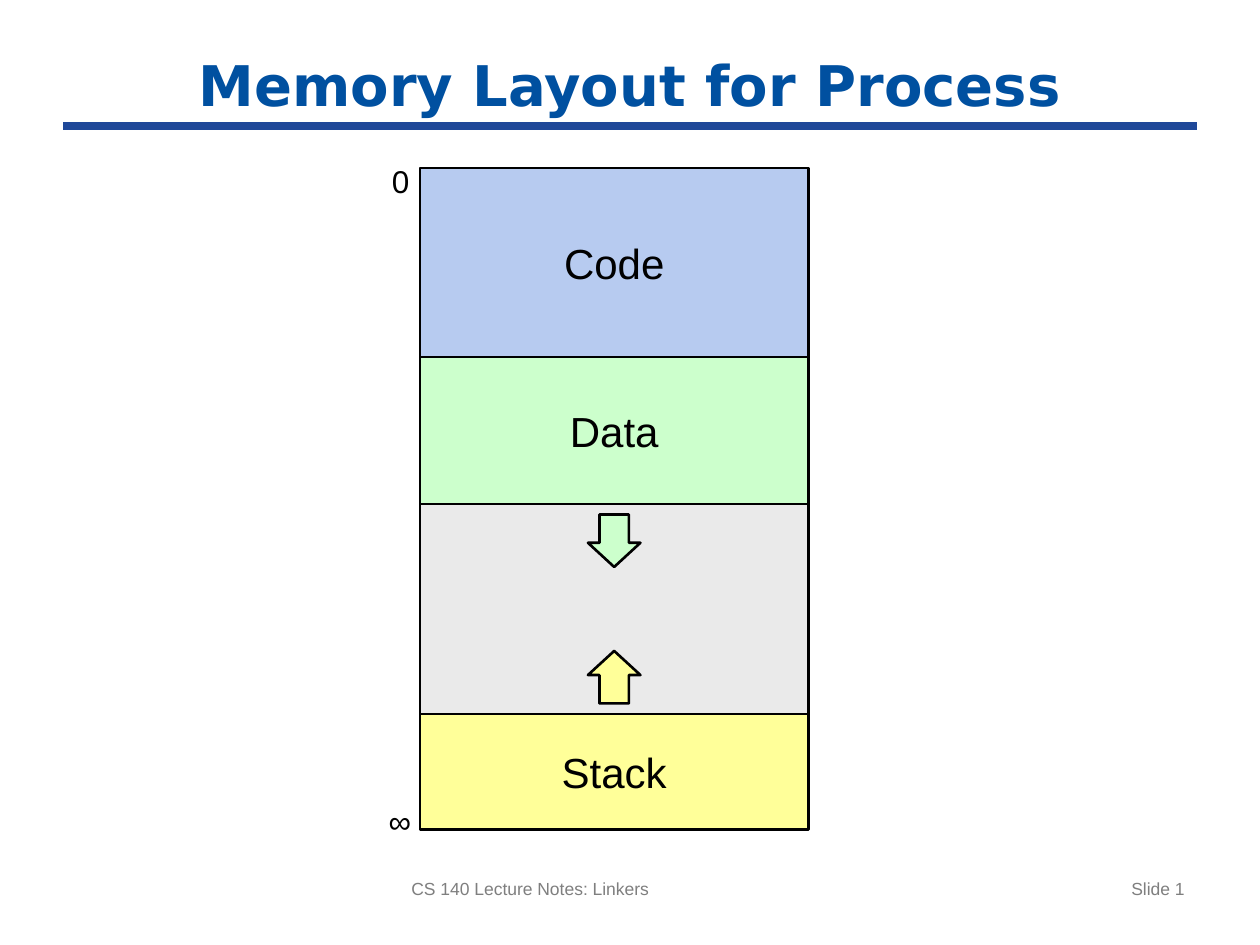
from pptx import Presentation
from pptx.dml.color import RGBColor
from pptx.enum.shapes import MSO_CONNECTOR, MSO_SHAPE as SHAPE
from pptx.enum.text import MSO_ANCHOR as ANCHOR, MSO_AUTO_SIZE as FIT, PP_ALIGN as ALIGN
from pptx.oxml.ns import qn
from pptx.util import Inches, Pt
from lxml.etree import SubElement

# Grid of twelve units to the inch
UNIT = Inches(1) // 12
BLACK, GREY, BLUE = "000000", "7F7F7F", "0050A0"
GREEN, YELLOW = "CCFFCC", "FFFF99"

# Memory column, in grid units
LEFT, TOP, WIDTH = 40, 16, 37
SEGMENTS = [  # name, height, fill
    ("Code", 18, "B7CBF0"),
    ("Data", 14, GREEN),
    ("", 20, "EAEAEA"),
    ("Stack", 11, YELLOW),
]
ARROW = 5


def grid(*units):
    return [round(u * UNIT) for u in units]


def rgb(hex_color):
    return RGBColor.from_string(hex_color)


def write(sp, text, size, color, align, font="Arial", bold=False):
    tf = sp.text_frame
    tf.text = text
    p = tf.paragraphs[0]
    p.alignment = align
    f = p.runs[0].font
    f.name, f.size, f.bold = font, Pt(size), bold
    f.color.rgb = rgb(color)
    return tf


def add_title(s, text):
    sp = s.shapes.title
    sp.left, sp.top, sp.width, sp.height = grid(6, 4, 108, 8)
    tf = write(sp, text, 32, BLUE, ALIGN.CENTER, "DejaVu Sans", True)
    tf.auto_size = FIT.NONE
    tf.vertical_anchor = ANCHOR.MIDDLE


def add_rule(s):
    line = s.shapes.add_connector(MSO_CONNECTOR.STRAIGHT, *grid(6, 12, 114, 12))
    line.line.color.rgb = rgb("1F4899")
    line.line.width = Pt(4.5)
    SubElement(line._element.spPr, qn("a:effectLst"))


def add_block(s, kind, x, y, w, h, fill, text=""):
    sp = s.shapes.add_shape(kind, *grid(x, y, w, h))
    sp.shadow.inherit = False
    sp.fill.solid()
    sp.fill.fore_color.rgb = rgb(fill)
    sp.line.color.rgb = rgb(BLACK)
    sp.line.width = Pt(1.5)
    if text:
        tf = write(sp, text, 24, BLACK, ALIGN.CENTER)
        tf.vertical_anchor = ANCHOR.MIDDLE
        tf.word_wrap = False
    return sp


def add_arrow(s, kind, y, fill):
    sp = add_block(s, kind, LEFT + (WIDTH - ARROW) / 2, y, ARROW, ARROW, fill)
    sp.adjustments[0], sp.adjustments[1] = 0.56, 0.46


def add_address(s, text, x, y, w):
    sp = s.shapes.add_textbox(*grid(x, y, w, 3.6))
    tf = write(sp, text, 18, BLACK, ALIGN.CENTER)
    tf.margin_left = tf.margin_right = tf.margin_top = tf.margin_bottom = 0
    tf.word_wrap = False
    tf.auto_size = FIT.SHAPE_TO_FIT_TEXT


def add_footer(s, text, x, w, align):
    sp = s.shapes.add_textbox(*grid(x, 83, w, 5.2))
    write(sp, text, 10, GREY, align).word_wrap = True


def main():
    prs = Presentation()
    prs.slide_width, prs.slide_height = Inches(10), Inches(7.5)
    s = prs.slides.add_slide(prs.slide_layouts[5])

    # Heading and footer
    add_rule(s)
    add_title(s, "Memory Layout for Process")
    add_footer(s, "CS 140 Lecture Notes: Linkers", 38, 45, ALIGN.LEFT)
    add_footer(s, "Slide 1", 86, 28, ALIGN.RIGHT)

    # Memory segments, stacked from the lowest address
    y = TOP
    for name, height, fill in SEGMENTS:
        add_block(s, SHAPE.RECTANGLE, LEFT, y, WIDTH, height, fill, name)
        if not name:  # free space, into which data and stack grow
            add_arrow(s, SHAPE.DOWN_ARROW, y + 1, GREEN)
            add_arrow(s, SHAPE.UP_ARROW, y + height - 1 - ARROW, YELLOW)
        y += height

    # Addresses at both ends
    add_address(s, "0", 37.3, TOP - 0.6, 1.7)
    add_address(s, "∞", 37, y - 2.6, 2.1)

    prs.save("out.pptx")


if __name__ == "__main__":
    main()
